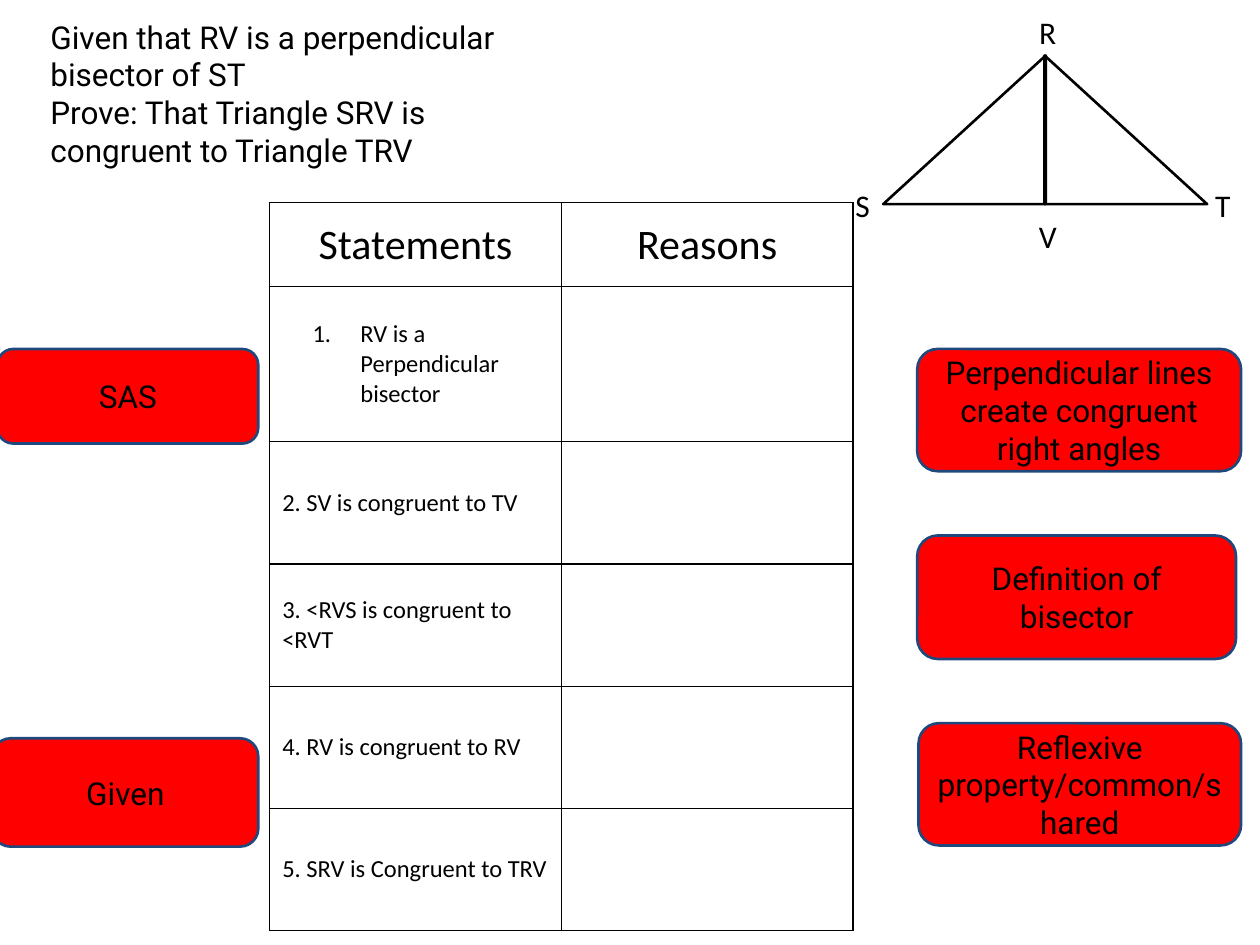
from lxml.etree import SubElement
from pptx import Presentation
from pptx.dml.color import RGBColor
from pptx.enum.shapes import MSO_SHAPE
from pptx.enum.text import MSO_ANCHOR, MSO_AUTO_SIZE, PP_ALIGN
from pptx.oxml.ns import qn
from pptx.util import Inches, Pt

HUES = {"ink": "000000", "card": "FF0000", "edge": "1F497D"}


class Proof:
    """Holds the style and the slide of a two-column proof."""

    def __init__(self, slide):
        self.slide = slide
        self.shapes = slide.shapes

    def hue(self, name):
        return RGBColor.from_string(HUES[name])

    def letter(self, frame, lines, face, size=18, align=PP_ALIGN.CENTER, anchor=MSO_ANCHOR.TOP):
        frame.text = "\n".join(lines)
        frame.word_wrap = True
        frame.auto_size = MSO_AUTO_SIZE.NONE
        frame.vertical_anchor = anchor
        frame.margin_left = frame.margin_right = Inches(0.1)
        frame.margin_top = frame.margin_bottom = Inches(0.1)
        for para in frame.paragraphs:
            self.style(para, face, size, align)

    def style(self, para, face, size, align):
        para.alignment = align
        para.font.name = face
        para.font.size = Pt(size)
        para.font.bold = False
        para.font.color.rgb = self.hue("ink")

    def title(self, box, lines):
        title = self.shapes.title
        title.left, title.top, title.width, title.height = map(Inches, box)
        self.letter(title.text_frame, lines, "Roboto", align=PP_ALIGN.LEFT)

    def label(self, text, left, top):
        box = self.shapes.add_textbox(*map(Inches, (left, top, 0.59, 0.44)))
        self.letter(box.text_frame, [text], "Calibri")

    def shape(self, kind, box, line):
        shape = self.shapes.add_shape(kind, *map(Inches, box))
        shape.shadow.inherit = False
        shape.fill.background()
        shape.line.color.rgb = self.hue(line)
        shape.line.width = Pt(1.5)
        return shape

    def half(self, left, flip):
        shape = self.shape(MSO_SHAPE.RIGHT_TRIANGLE, (left, 0.44, 1.29, 1.18), "ink")
        if flip:
            shape.element.spPr.find(qn("a:xfrm")).set("flipH", "1")

    def card(self, text, box):
        card = self.shape(MSO_SHAPE.ROUNDED_RECTANGLE, box, "edge")
        card.fill.solid()
        card.fill.fore_color.rgb = self.hue("card")
        self.letter(card.text_frame, [text], "Roboto", anchor=MSO_ANCHOR.MIDDLE)

    def border(self, cell):
        props = cell._tc.get_or_add_tcPr()
        for side in ("lnL", "lnR", "lnT", "lnB"):
            line = SubElement(props, qn(f"a:{side}"), w=str(Pt(0.75)))
            fill = SubElement(line, qn("a:solidFill"))
            SubElement(fill, qn("a:srgbClr"), val=HUES["ink"])

    def number(self, para):
        props = para._p.get_or_add_pPr()
        props.set("marL", str(Inches(0.62)))
        props.set("indent", str(Inches(-0.38)))
        SubElement(props, qn("a:buAutoNum"), type="arabicPeriod")

    def table(self, box, heads, steps, heights):
        rows = [heads] + [(step, "") for step in steps]
        table = self.shapes.add_table(len(rows), len(heads), *map(Inches, box)).table
        table.first_row = table.horz_banding = False
        for row, height in zip(table.rows, heights):
            row.height = Inches(height)
        for r, row in enumerate(rows):
            for c, text in enumerate(row):
                cell = table.cell(r, c)
                cell.text = text
                cell.margin_left = cell.margin_right = Inches(0.1)
                cell.margin_top = cell.margin_bottom = Inches(0.13)
                cell.vertical_anchor = MSO_ANCHOR.MIDDLE if r else MSO_ANCHOR.BOTTOM
                self.border(cell)
                cell.fill.background()
                para = cell.text_frame.paragraphs[0]
                if (r, c) == (1, 0):
                    self.number(para)
                self.style(para, "Calibri", 14 if r else 24, PP_ALIGN.LEFT if r else PP_ALIGN.CENTER)


def main():
    deck = Presentation()
    deck.slide_width, deck.slide_height = Inches(10), Inches(7.5)
    proof = Proof(deck.slides.add_slide(deck.slide_layouts[5]))
    proof.title((0.3, 0.04, 3.99, 1.18), [
        "Given that RV is a perpendicular bisector of ST",
        "Prove: That Triangle SRV is congruent to Triangle TRV",
    ])
    proof.table((2.14, 1.61, 4.63, 5.74), ("Statements", "Reasons"), [
        "RV is a Perpendicular bisector",
        "2. SV is congruent to TV",
        "3. <RVS is congruent to <RVT",
        "4. RV is congruent to RV",
        "5. SRV is Congruent to TRV",
    ], [0.63, 1.23] + [0.97] * 4)
    for left, flip in ((8.29, False), (7.01, True)):
        proof.half(left, flip)
    for text, left, top in (("R", 8.02, 0), ("S", 6.55, 1.38), ("T", 9.41, 1.38), ("V", 8.02, 1.62)):
        proof.label(text, left, top)
    for text, box in (
        ("Definition of bisector", (7.28, 4.25, 2.53, 0.98)),
        ("Reflexive property/common/shared", (7.29, 5.74, 2.56, 0.97)),
        ("Given", (-0.06, 5.86, 2.11, 0.86)),
        ("Perpendicular lines create congruent right angles", (7.28, 2.77, 2.57, 0.97)),
        ("SAS", (-0.02, 2.77, 2.07, 0.75)),
    ):
        proof.card(text, box)
    deck.save("out.pptx")


if __name__ == "__main__":
    main()
